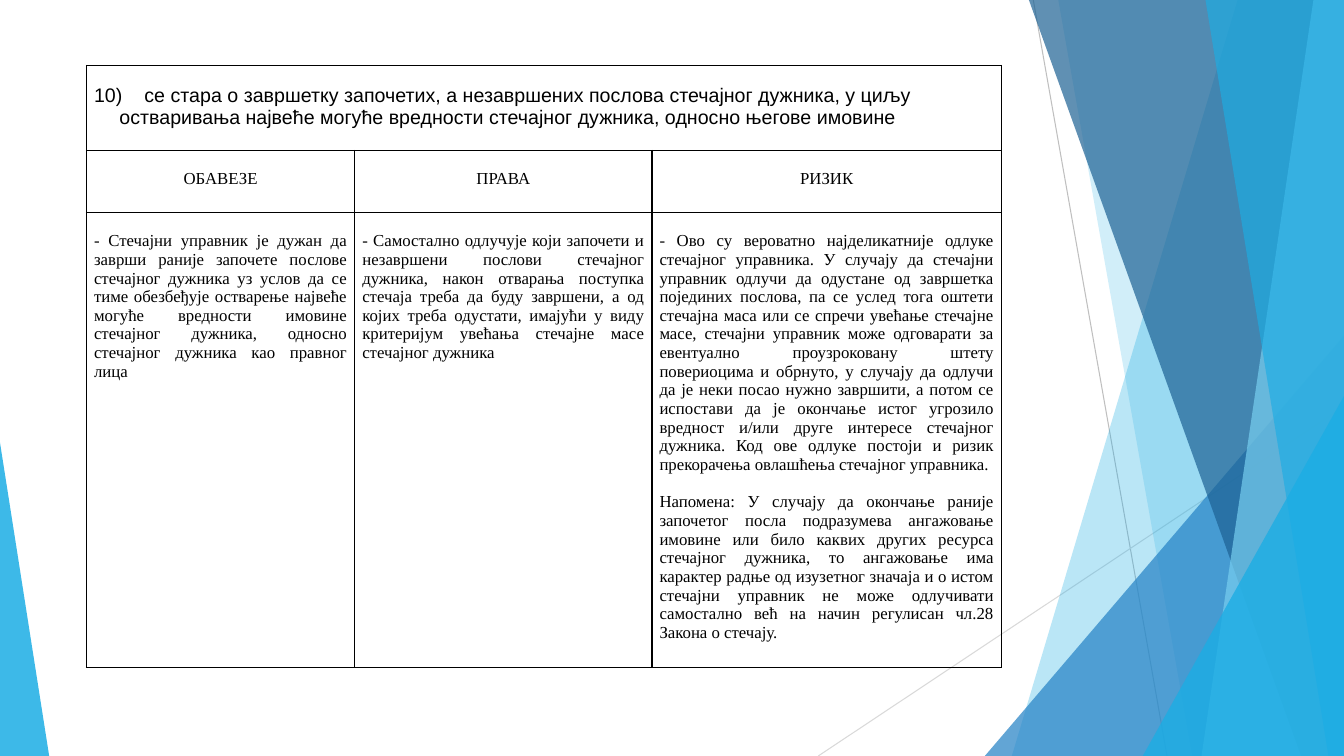
from lxml import etree
from pptx import Presentation
from pptx.dml import color
from pptx.enum import shapes, text
from pptx.oxml import ns
from pptx.util import Cm, Pt

WIDE, HIGH = 33.87, 19.05
HUES = {"sky": "1CADE4", "blue": "2683C6", "navy": "1D6294", "pale": "77CEEF",
        "gray": "BFBFBF", "mist": "D9D9D9", "ink": "000000"}

LINES = [((26.04, 0), (29.41, HIGH), "gray"), ((WIDE, 10.24), (20.62, HIGH), "mist")]
# Top x, bottom x, hue, opacity in percent
BACK = [(31.19, 25.5, "sky", 30), (26.67, 30.05, "sky", 20)]
FRONT = [(25.93, 32.79, "navy", 70), (33.1, 30.28, "pale", 70), (30.38, 33.48, "sky", 65)]

COLS = [6.76, 7.49, 8.81]
ROWS = [2.14, 1.57, 11.46]
TITLE = ("\tсе стара о завршетку започетих, а незавршених послова стечајног дужника, у циљу "
         "остваривања највеће могуће вредности стечајног дужника, односно његове имовине")
HEADS = ["ОБАВЕЗЕ", "ПРАВА", "РИЗИК"]
DUTY = ("- Стечајни управник је дужан да заврши раније започете послове стечајног дужника уз "
        "услов да се тиме обезбеђује остварење највеће могуће вредности имовине стечајног "
        "дужника, односно стечајног дужника као правног лица")
RIGHTS = ("- Самостално одлучује који започети и незавршени послови стечајног дужника, након "
          "отварања поступка стечаја треба да буду завршени, а од којих треба одустати, имајући "
          "у виду критеријум увећања стечајне масе стечајног дужника")
RISK = ("- Ово су вероватно најделикатније одлуке стечајног управника. У случају да стечајни "
        "управник одлучи да одустане од завршетка појединих послова, па се услед тога оштети "
        "стечајна маса или се спречи увећање стечајне масе, стечајни управник може одговарати "
        "за евентуално проузроковану штету повериоцима и обрнуто, у случају да одлучи да је "
        "неки посао нужно завршити, а потом се испостави да је окончање истог угрозило вредност "
        "и/или друге интересе стечајног дужника. Код ове одлуке постоји и ризик прекорачења "
        "овлашћења стечајног управника.")
NOTE = ("Напомена: У случају да окончање раније започетог посла подразумева ангажовање имовине "
        "или било каквих других ресурса стечајног дужника, то ангажовање има карактер радње од "
        "изузетног значаја и о истом стечајни управник не може одлучивати самостално већ на "
        "начин регулисан чл.28 Закона о стечају.")
BODY = [[DUTY], [RIGHTS], [RISK, NOTE]]


def add(node, tag, **attrs):
    """Append a child element and return it."""
    return etree.SubElement(node, ns.qn(tag), attrs)


def rgb(hue):
    return color.RGBColor.from_string(HUES[hue])


def paint(shape, hue, alpha):
    """Fill without outline or shadow, at the given opacity in percent."""
    shape.shadow.inherit = False
    shape.line.fill.background()
    shape.fill.solid()
    shape.fill.fore_color.rgb = rgb(hue)
    tint = shape.fill._xPr.find(".//" + ns.qn("a:srgbClr"))
    add(tint, "a:alpha", val=str(alpha * 1000))


def draw_line(slide, start, end, hue):
    ends = [Cm(v) for v in (*start, *end)]
    line = slide.shapes.add_connector(shapes.MSO_CONNECTOR.STRAIGHT, *ends)
    line.line.color.rgb = rgb(hue)
    line.line.width = Pt(0.75)
    add(line._element.spPr, "a:effectLst")


def draw_band(slide, top, foot, hue, alpha):
    """Draw a band from a slanted left edge to the right side of the slide."""
    pen = slide.shapes.build_freeform(Cm(top), 0)
    rest = [(WIDE, 0), (WIDE, HIGH), (foot, HIGH)]
    pen.add_line_segments([(Cm(x), Cm(y)) for x, y in rest])
    paint(pen.convert_to_shape(), hue, alpha)


def draw_wedge(slide, left, top, wide, apex, hue, alpha):
    """Draw a triangle standing on the bottom of the slide."""
    box = [Cm(v) for v in (left, top, wide, HIGH - top)]
    wedge = slide.shapes.add_shape(shapes.MSO_SHAPE.ISOSCELES_TRIANGLE, *box)
    wedge.adjustments[0] = apex
    paint(wedge, hue, alpha)


def frame(cell):
    props = cell._tc.get_or_add_tcPr()
    for side in ("L", "R", "T", "B"):
        edge = add(props, "a:ln" + side, w=str(Pt(1)))
        add(add(edge, "a:solidFill"), "a:srgbClr", val=HUES["ink"])
    cell.fill.background()


def write(cell, parts, align, size=12, face="Times New Roman"):
    look = {"margin_left": Cm(0.19), "margin_right": Cm(0.19),
            "margin_top": Cm(0.48), "margin_bottom": 0}
    for name, value in look.items():
        setattr(cell, name, value)
    cell.text = "\n".join(parts)
    for i, par in enumerate(cell.text_frame.paragraphs):
        par.alignment = align
        par.space_before = Pt(13.3 if i else 0)
        for name, value in {"size": Pt(size), "name": face, "bold": False}.items():
            setattr(par.runs[0].font, name, value)
        par.runs[0].font.color.rgb = rgb("ink")


def number(par, start):
    """Number the paragraph with a hanging indent and a tab stop."""
    props = par._p.get_or_add_pPr()
    props.set("marL", str(Cm(0.64)))
    props.set("indent", str(-Cm(0.64)))
    add(props, "a:buFont", typeface="Arial")
    add(props, "a:buAutoNum", type="arabicParenR", startAt=str(start))
    add(add(props, "a:tabLst"), "a:tab", pos=str(Cm(1.27)), algn="l")


def add_grid(slide):
    size = (sum(COLS), sum(ROWS))
    box = [Cm(v) for v in (2.18, 1.65, *size)]
    grid = slide.shapes.add_table(len(ROWS), len(COLS), *box).table
    grid.first_row = grid.horz_banding = False
    for col, wide in zip(grid.columns, COLS):
        col.width = Cm(wide)
    for row, high in zip(grid.rows, ROWS):
        row.height = Cm(high)
    for cell in grid.iter_cells():
        frame(cell)
    title = grid.cell(0, 0)
    title.merge(grid.cell(0, len(COLS) - 1))
    write(title, [TITLE], text.PP_ALIGN.LEFT, 14, "Arial")
    number(title.text_frame.paragraphs[0], 10)
    for i, (head, parts) in enumerate(zip(HEADS, BODY)):
        write(grid.cell(1, i), [head], text.PP_ALIGN.CENTER)
        write(grid.cell(2, i), parts, text.PP_ALIGN.JUSTIFY)


def main():
    deck = Presentation()
    deck.slide_width, deck.slide_height = Cm(WIDE), Cm(HIGH)
    slide = deck.slides.add_slide(deck.slide_layouts[6])
    for line in LINES:
        draw_line(slide, *line)
    for band in BACK:
        draw_band(slide, *band)
    draw_wedge(slide, 24.82, 8.46, 9.05, 1, "blue", 72)
    for band in FRONT:
        draw_band(slide, *band)
    draw_wedge(slide, 28.8, 9.98, 5.07, 1, "sky", 80)
    draw_wedge(slide, 0, 11.15, 1.24, 0, "sky", 85)
    add_grid(slide)
    deck.save("out.pptx")


if __name__ == "__main__":
    main()
